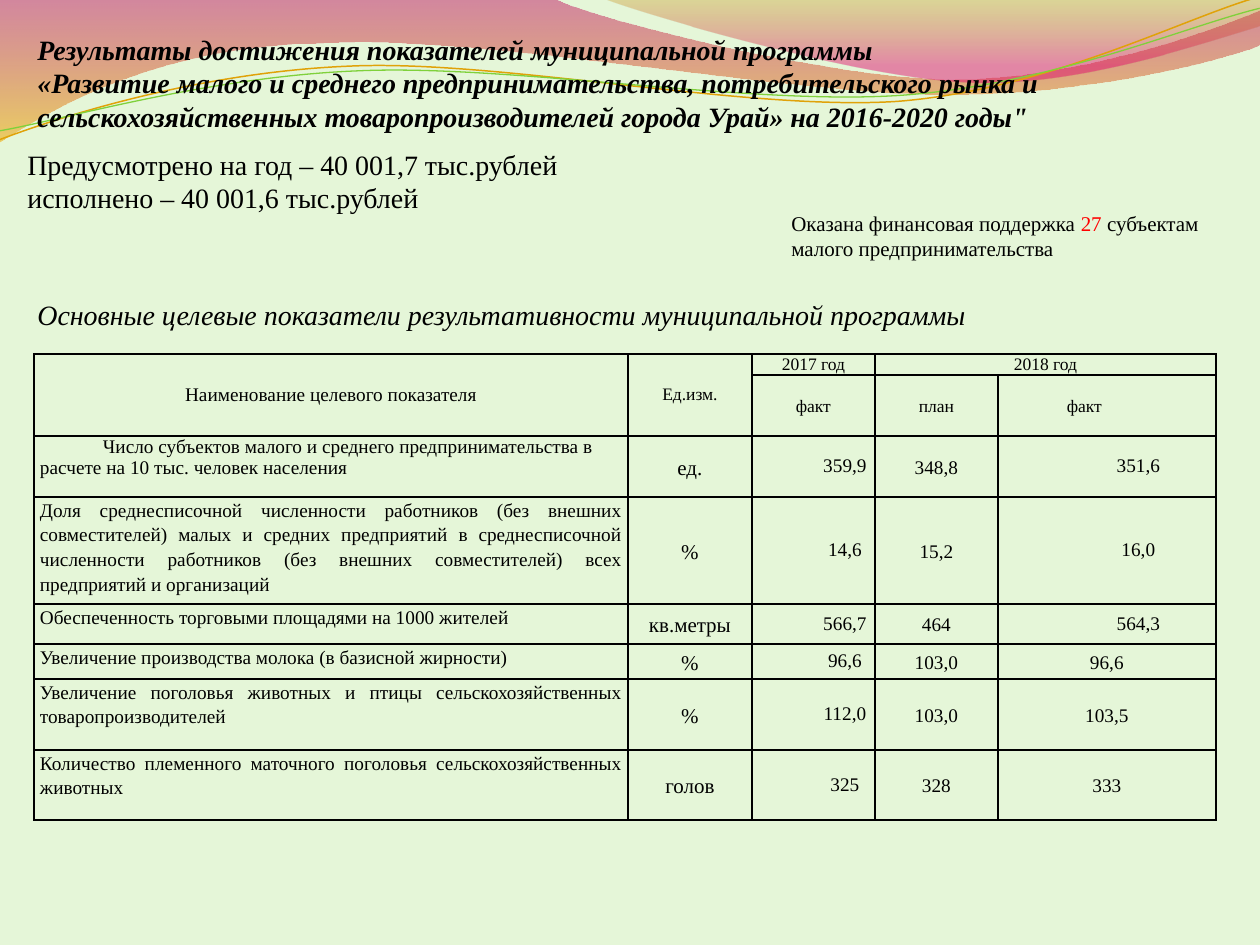
from dataclasses import dataclass
from typing import Any

from lxml.etree import SubElement
from pptx import Presentation
from pptx.dml.color import RGBColor
from pptx.enum.text import MSO_ANCHOR, MSO_AUTO_SIZE, PP_ALIGN
from pptx.oxml.ns import qn
from pptx.util import Pt

EMU_PER_PX = 914400 / 126
FONT = "Times New Roman"
COLORS = {
    "background": "E5F6D8", "text": "000000", "accent": "FF0000", "border": "000000",
    "crimson": "BD0059", "amber": "F0AB00", "ochre": "C38B00", "pink": "E1006B",
    "gold": "E0A209", "green": "7FD13B",
}
CELL_INSET = 6
HEADING_INSET = 9
FIRST_LINE_INDENT = 63
STROKE_ROTATION = 357.3

MIDDLE = {"vertical_anchor": MSO_ANCHOR.MIDDLE}
TOP = {"vertical_anchor": MSO_ANCHOR.TOP}
CENTRED = {"alignment": PP_ALIGN.CENTER}
LOOSE = {"line_spacing": 1.15}

Point = tuple[int, int]


def px(length: int) -> int:
    return round(length * EMU_PER_PX)


def rgb(name: str) -> RGBColor:
    return RGBColor.from_string(COLORS[name])


def apply(target: Any, values: dict[str, Any]) -> None:
    for attribute, value in values.items():
        setattr(target, attribute, value)


@dataclass(frozen=True)
class GradientStop:
    position: float
    color: str
    opacity: int


@dataclass(frozen=True)
class Wave:
    start: Point
    segments: list[tuple[Point, ...]]
    gradient: tuple[GradientStop, ...] = ()
    stroke: str = ""
    width: float = 0


@dataclass(frozen=True)
class Span:
    text: str
    color: str = "text"


@dataclass(frozen=True)
class Caption:
    box: tuple[int, int, int, int]
    paragraphs: list[list[Span]]
    font: dict[str, Any]


@dataclass(frozen=True)
class CellStyle:
    size: int
    paragraph: dict[str, Any]
    cell: dict[str, Any]
    inset: int = CELL_INSET
    indent: int = 0


@dataclass(frozen=True)
class Indicator:
    height: int
    values: tuple[str, str, str, str, str]
    name_style: str = "name"
    plan_style: str = "number"
    fact_style: str = "indented"


STYLES = {
    "title": CellStyle(11, CENTRED, MIDDLE, HEADING_INSET),
    "heading": CellStyle(10, CENTRED, MIDDLE, HEADING_INSET),
    "subheading": CellStyle(10, CENTRED | LOOSE, MIDDLE),
    "last subheading": CellStyle(10, LOOSE, MIDDLE, indent=FIRST_LINE_INDENT),
    "first name": CellStyle(11, {}, TOP, indent=FIRST_LINE_INDENT),
    "name": CellStyle(11, {"alignment": PP_ALIGN.JUSTIFY} | LOOSE, TOP),
    "unit": CellStyle(12, CENTRED | LOOSE, MIDDLE),
    "indented": CellStyle(11, CENTRED, MIDDLE, indent=FIRST_LINE_INDENT),
    "number": CellStyle(11, CENTRED | LOOSE, MIDDLE),
    "spaced": CellStyle(11, CENTRED | LOOSE | {"space_after": Pt(10)}, MIDDLE),
}

WAVES = [
    Wave((0, -1), [
        ((554, -1),),
        ((600, 21), (837, 79), (955, 79)),
        ((1074, 79), (1207, 33), (1260, 11)),
        ((1261, 45),),
        ((1239, 55), (1096, 96), (940, 94)),
        ((784, 94), (481, 35), (324, 43)),
        ((163, 45), (58, 105), (-1, 142)),
    ], gradient=(GradientStop(0, "crimson", 45), GradientStop(1, "amber", 55))),
    Wave((604, -1), [
        ((641, 14), (859, 78), (969, 82)),
        ((1079, 87), (1211, 40), (1260, 26)),
        ((1260, 0),),
    ], gradient=(GradientStop(0, "ochre", 30), GradientStop(0.8, "pink", 45))),
    Wave((-3, 110), [
        ((58, 90), (199, 52), (350, 53)),
        ((499, 53), (745, 117), (896, 114)),
        ((1048, 109), (1184, 45), (1260, 27)),
    ], stroke="gold", width=0.85),
    Wave((-2, 101), [
        ((57, 94), (207, 57), (357, 58)),
        ((509, 58), (750, 112), (902, 108)),
        ((1052, 104), (1189, 52), (1262, 38)),
    ], stroke="green", width=0.75),
]

CAPTIONS = [
    Caption((25, 26, 1203, 115), [
        [Span("Результаты достижения показателей муниципальной программы")],
        [Span("«Развитие малого и среднего предпринимательства, потребительского рынка и "
              "сельскохозяйственных товаропроизводителей города Урай» на 2016-2020 годы\"")],
    ], {"size": Pt(16), "bold": True, "italic": True}),
    Caption((15, 141, 735, 81), [
        [Span("Предусмотрено на год – 40 001,7 тыс.рублей")],
        [Span("исполнено – 40 001,6 тыс.рублей")],
    ], {"size": Pt(16)}),
    Caption((779, 204, 451, 63), [
        [Span("Оказана финансовая поддержка "), Span("27 ", "accent"),
         Span("субъектам малого предпринимательства")],
    ], {"size": Pt(12)}),
    Caption((25, 291, 1142, 47), [
        [Span("Основные целевые показатели результативности муниципальной программы")],
    ], {"size": Pt(16), "italic": True}),
]

TABLE_LEFT, TABLE_TOP = 34, 354
COLUMN_WIDTHS = [594, 124, 123, 123, 218]
HEADER_HEIGHTS = [21, 61]
HEADERS = [
    (0, 0, "Наименование целевого показателя", "title"),
    (0, 1, "Ед.изм.", "heading"),
    (0, 2, "2017 год", "heading"),
    (0, 3, "2018 год", "heading"),
    (1, 2, "факт", "subheading"),
    (1, 3, "план", "subheading"),
    (1, 4, "факт", "last subheading"),
]
MERGES = [((0, 0), (1, 0)), ((0, 1), (1, 1)), ((0, 3), (0, 4))]
INDICATORS = [
    Indicator(61, ("Число субъектов малого и среднего предпринимательства в расчете на 10 тыс. "
                   "человек населения", "ед.", "359,9", "348,8", "351,6"), name_style="first name"),
    Indicator(107, ("Доля среднесписочной численности работников (без внешних совместителей) малых "
                    "и средних предприятий в среднесписочной численности работников (без внешних "
                    "совместителей) всех предприятий и организаций", "%", "14,6", "15,2", "16,0")),
    Indicator(40, ("Обеспеченность торговыми площадями на 1000 жителей",
                   "кв.метры", "566,7", "464", "564,3")),
    Indicator(35, ("Увеличение производства молока (в базисной жирности)",
                   "%", "96,6", "103,0", "96,6"), plan_style="spaced", fact_style="spaced"),
    Indicator(71, ("Увеличение поголовья животных и птицы сельскохозяйственных "
                   "товаропроизводителей", "%", "112,0", "103,0", "103,5"),
              plan_style="spaced", fact_style="spaced"),
    Indicator(70, ("Количество племенного маточного поголовья сельскохозяйственных животных",
                   "голов", "325", "328", "333"), plan_style="spaced", fact_style="spaced"),
]


def bend_segments(ribbon: Any, segments: list[tuple[Point, ...]]) -> None:
    straight = list(ribbon.element.iter(qn("a:lnTo")))
    for line, controls in zip(straight, segments):
        if len(controls) == 1:
            continue
        curve = SubElement(line.getparent(), qn("a:cubicBezTo"))
        for x, y in controls:
            SubElement(curve, qn("a:pt"), x=str(px(x) - ribbon.left), y=str(px(y) - ribbon.top))
        line.getparent().replace(line, curve)


def draw_wave(slide: Any, wave: Wave) -> None:
    builder = slide.shapes.build_freeform(px(wave.start[0]), px(wave.start[1]))
    anchors = [tuple(map(px, segment[-1])) for segment in wave.segments]
    builder.add_line_segments(anchors, close=bool(wave.gradient))
    ribbon = builder.convert_to_shape()
    bend_segments(ribbon, wave.segments)
    ribbon.shadow.inherit = False
    if not wave.gradient:
        ribbon.rotation = STROKE_ROTATION
        ribbon.fill.background()
        ribbon.line.color.rgb = rgb(wave.stroke)
        ribbon.line.width = Pt(wave.width)
        return
    ribbon.line.fill.background()
    ribbon.fill.gradient()
    ribbon.fill.gradient_angle = 270
    for stop, values in zip(ribbon.fill.gradient_stops, wave.gradient):
        stop.position = values.position
        stop.color.rgb = rgb(values.color)
    for color, values in zip(ribbon.element.iter(qn("a:srgbClr")), wave.gradient):
        SubElement(color, qn("a:alpha"), val=str(values.opacity * 1000))


def add_span(paragraph: Any, span: Span, font: dict[str, Any]) -> None:
    run = paragraph.add_run()
    run.text = span.text
    apply(run.font, {"name": FONT} | font)
    run.font.color.rgb = rgb(span.color)


def draw_caption(slide: Any, caption: Caption) -> None:
    frame = slide.shapes.add_textbox(*map(px, caption.box)).text_frame
    apply(frame, {"word_wrap": True, "auto_size": MSO_AUTO_SIZE.SHAPE_TO_FIT_TEXT})
    for index, spans in enumerate(caption.paragraphs):
        paragraph = frame.add_paragraph() if index else frame.paragraphs[0]
        for span in spans:
            add_span(paragraph, span, caption.font)


def border_cell(cell: Any) -> None:
    cell.fill.background()
    properties = cell._tc.get_or_add_tcPr()
    for index, side in enumerate(("a:lnL", "a:lnR", "a:lnT", "a:lnB")):
        edge = SubElement(properties, qn(side), w=str(Pt(1)))
        SubElement(SubElement(edge, qn("a:solidFill")), qn("a:srgbClr"), val=COLORS["border"])
        properties.insert(index, edge)


def fill_cell(cell: Any, text: str, style: CellStyle) -> None:
    inset = px(style.inset)
    apply(cell, {"margin_left": inset, "margin_right": inset, "margin_top": 0,
                 "margin_bottom": 0} | style.cell)
    paragraph = cell.text_frame.paragraphs[0]
    apply(paragraph, style.paragraph)
    if style.indent:
        properties = paragraph._p.get_or_add_pPr()
        properties.set("marL", "0")
        properties.set("indent", str(px(style.indent)))
    add_span(paragraph, Span(text), {"size": Pt(style.size)})


def draw_indicators(slide: Any) -> None:
    heights = HEADER_HEIGHTS + [indicator.height for indicator in INDICATORS]
    table = slide.shapes.add_table(
        len(heights), len(COLUMN_WIDTHS), px(TABLE_LEFT), px(TABLE_TOP),
        px(sum(COLUMN_WIDTHS)), px(sum(heights))).table
    apply(table, {"first_row": False, "horz_banding": False})
    for column, width in zip(table.columns, COLUMN_WIDTHS):
        column.width = px(width)
    for row, height in zip(table.rows, heights):
        row.height = px(height)
    for cell in table.iter_cells():
        border_cell(cell)
    for first, last in MERGES:
        table.cell(*first).merge(table.cell(*last))
    for row, column, text, style in HEADERS:
        fill_cell(table.cell(row, column), text, STYLES[style])
    for row, indicator in enumerate(INDICATORS, len(HEADER_HEIGHTS)):
        styles = (indicator.name_style, "unit", "indented",
                  indicator.plan_style, indicator.fact_style)
        for column, (text, style) in enumerate(zip(indicator.values, styles)):
            fill_cell(table.cell(row, column), text, STYLES[style])


def main() -> None:
    presentation = Presentation()
    apply(presentation, {"slide_width": px(1260), "slide_height": px(945)})
    slide = presentation.slides.add_slide(presentation.slide_layouts[6])
    slide.background.fill.solid()
    slide.background.fill.fore_color.rgb = rgb("background")
    for wave in WAVES:
        draw_wave(slide, wave)
    draw_indicators(slide)
    for caption in CAPTIONS:
        draw_caption(slide, caption)
    presentation.save("out.pptx")


if __name__ == "__main__":
    main()
